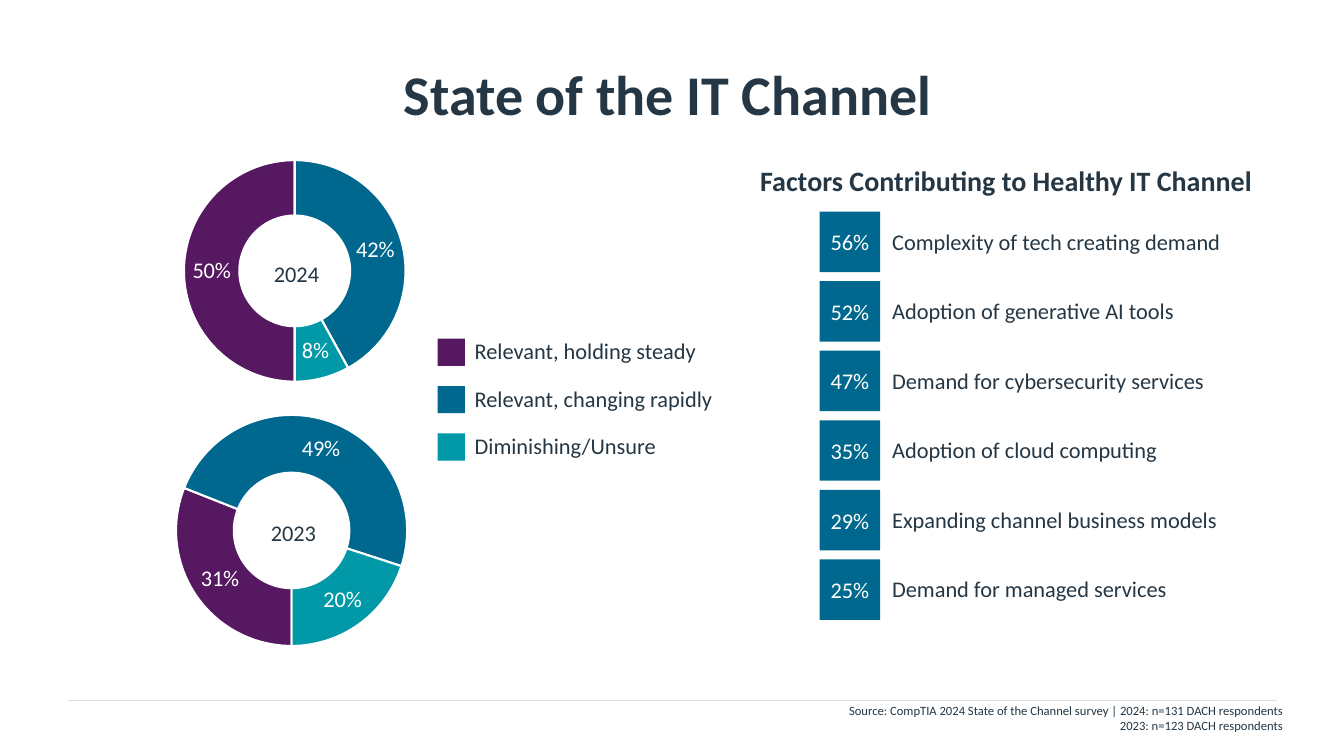
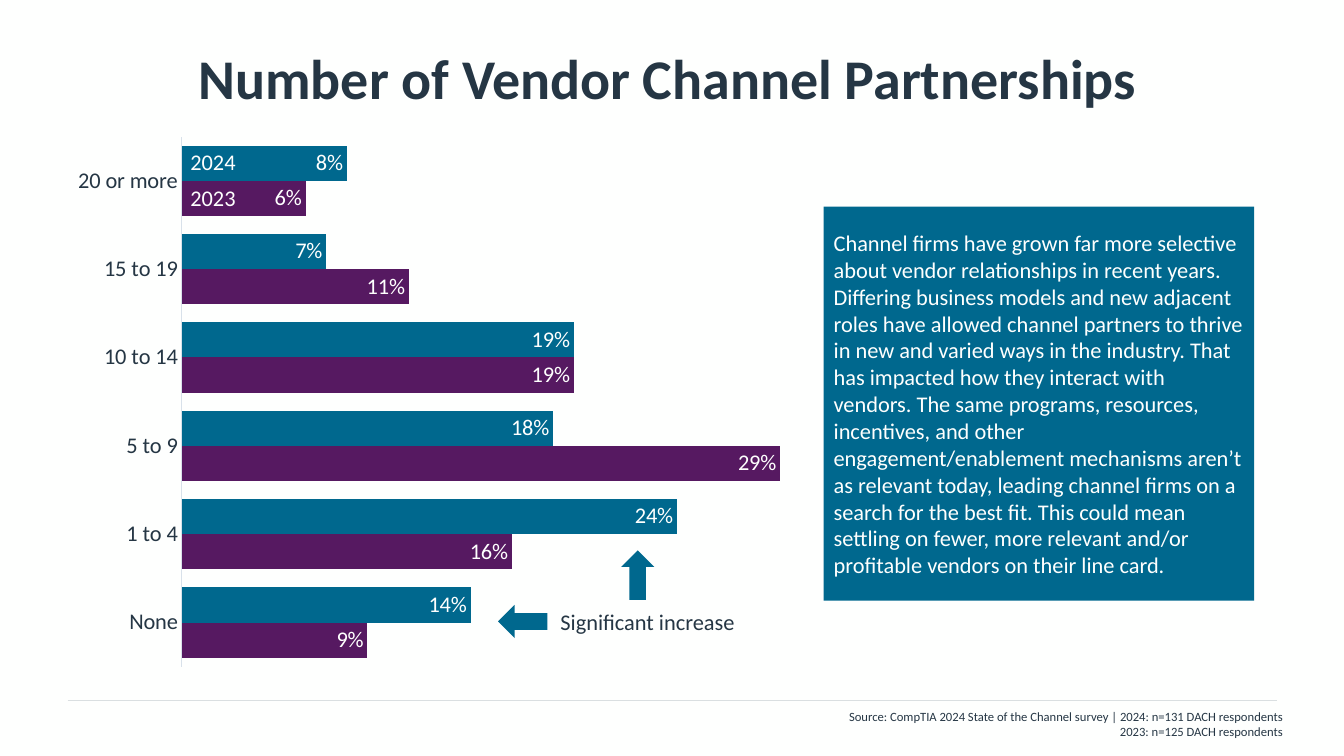
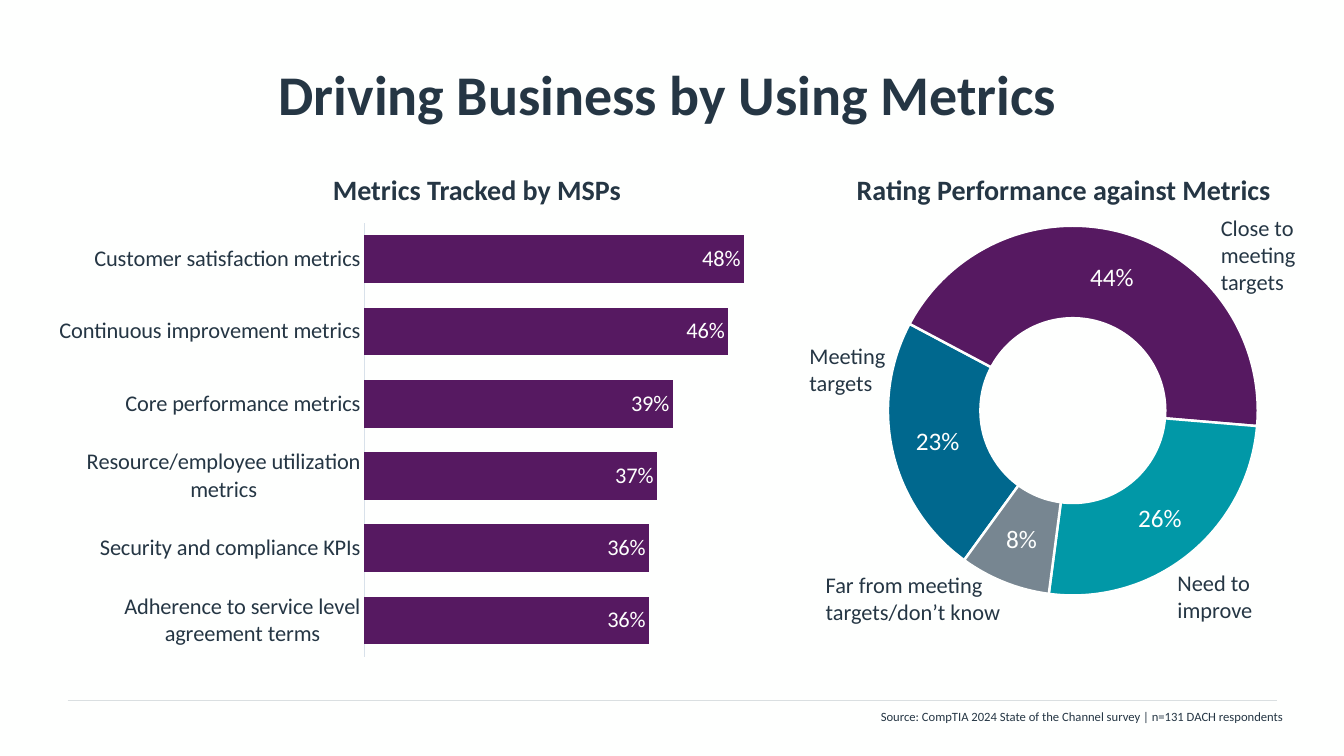
from pptx import Presentation
from pptx import util as u
from pptx.chart.data import CategoryChartData
from pptx.dml.color import RGBColor
from pptx.enum import chart as charts, shapes, text
from pptx.oxml import parse_xml
from pptx.oxml.ns import nsdecls, qn

COLORS = {
    "paper": "FEFFFE",
    "ink": "253644",
    "rule": "DADFE1",
    "axis": "D8E1EA",
    "purple": "561961",
    "blue": "00688E",
    "teal": "0198A7",
    "gray": "778691",
}
FONT = "Calibri"
LEFT, CENTER, RIGHT = text.PP_ALIGN.LEFT, text.PP_ALIGN.CENTER, text.PP_ALIGN.RIGHT
TOP, MIDDLE = text.MSO_ANCHOR.TOP, text.MSO_ANCHOR.MIDDLE
SURVEY = "Source: CompTIA 2024 State of the Channel survey | "


def color(name):
    return RGBColor.from_string(COLORS[name])


def inches(*lengths):
    return [u.Inches(length) for length in lengths]


def style(font, size, name="ink", bold=False):
    font.name = FONT
    font.size = u.Pt(size)
    font.bold = bold
    font.color.rgb = color(name)


def write(frame, words, size=16, ink="ink", bold=False, align=LEFT,
          anchor=TOP, inset=0.1, after=0, wrap=True):
    frame.text = words
    frame.word_wrap = wrap
    frame.vertical_anchor = anchor
    frame.margin_left, frame.margin_right = inches(inset, 0.1)
    frame.margin_top = frame.margin_bottom = u.Inches(0.05)
    for para in frame.paragraphs:
        para.alignment = align
        para.space_after = u.Pt(after)
        for span in para.runs:
            style(span.font, size, ink, bold)


class Deck:
    def __init__(self):
        self.file = Presentation()
        self.file.slide_width, self.file.slide_height = inches(13.33, 7.5)
        self.page = None

    def new_page(self, title, source, title_top=0.3, source_top=6.98):
        self.page = self.file.slides.add_slide(self.file.slide_layouts[5])
        fill = self.page.background.fill
        fill.solid()
        fill.fore_color.rgb = color("paper")
        self.rule()
        box = self.page.shapes.title
        box.left, box.top, box.width, box.height = inches(0.67, title_top, 12, 1.25)
        write(box.text_frame, title, size=40, bold=True, align=CENTER,
              anchor=MIDDLE, inset=0)
        self.label(SURVEY + source, 6.33, source_top, 6.49, 0.4, size=9, align=RIGHT)

    def rule(self):
        line = self.page.shapes.add_connector(
            shapes.MSO_CONNECTOR.STRAIGHT, *inches(0.67, 6.95, 12.67, 6.95))
        line.line.color.rgb = color("rule")
        line.line.width = u.Pt(0.5)
        line.element.spPr.append(parse_xml(f"<a:effectLst {nsdecls('a')}/>"))

    def label(self, words, left, top, width, height=0.37, **form):
        box = self.page.shapes.add_textbox(*inches(left, top, width, height))
        write(box.text_frame, words, **form)

    def heading(self, words, left, top, width, align=CENTER):
        self.label(words, left, top, width, 0.44, size=20, bold=True, align=align)

    def shape(self, left, top, width, height, fill="blue", words="",
              kind=shapes.MSO_SHAPE.RECTANGLE, turn=0, **form):
        box = self.page.shapes.add_shape(kind, *inches(left, top, width, height))
        box.shadow.inherit = False
        box.fill.solid()
        box.fill.fore_color.rgb = color(fill)
        box.line.fill.background()
        box.rotation = turn
        if words:
            write(box.text_frame, words, ink="paper", anchor=MIDDLE, **form)

    def arrow(self, left, top, turn):
        self.shape(left, top, 0.49, 0.33, kind=shapes.MSO_SHAPE.RIGHT_ARROW, turn=turn)

    def chart(self, kind, place, area, categories, rows, label_size=16):
        data = CategoryChartData(number_format="0%")
        data.categories = categories
        for number, row in enumerate(rows, 1):
            data.add_series(f"Series {number}", row)
        chart = self.page.shapes.add_chart(kind, *inches(*place), data).chart
        chart.has_legend = False
        chart.has_title = False
        style(chart.font, 11)
        self.place_plot(chart, area)
        plot = chart.plots[0]
        plot.has_data_labels = True
        labels = plot.data_labels
        labels.show_value = True
        labels.show_percentage = False
        labels.number_format = "0%"
        labels.number_format_is_linked = False
        style(labels.font, label_size, "paper")
        return chart

    def place_plot(self, chart, area):
        holder = chart.element.xpath(".//c:plotArea")[0]
        for old in holder.findall(qn("c:layout")):
            holder.remove(old)
        sizes = "".join(f'<c:{key} val="{value}"/>' for key, value in zip("xywh", area))
        holder.insert(0, parse_xml(
            f'<c:layout {nsdecls("c")}><c:manualLayout><c:layoutTarget val="inner"/>'
            f'<c:xMode val="edge"/><c:yMode val="edge"/>{sizes}'
            "</c:manualLayout></c:layout>"))

    def doughnut(self, place, area, values, fills, start=180, edge=1.5, label_size=16):
        categories = [str(number) for number in range(1, len(values) + 1)]
        chart = self.chart(charts.XL_CHART_TYPE.DOUGHNUT, place, area,
                           categories, [values], label_size)
        chart.element.xpath(".//c:firstSliceAng")[0].set("val", str(start))
        chart.element.xpath(".//c:holeSize")[0].set("val", "50")
        series = chart.plots[0].series[0]
        for number, name in enumerate(fills):
            form = series.points[number].format
            form.fill.solid()
            form.fill.fore_color.rgb = color(name)
            form.line.color.rgb = color("paper")
            form.line.width = u.Pt(edge)

    def bars(self, place, area, categories, rows, fills, limit):
        chart = self.chart(charts.XL_CHART_TYPE.BAR_CLUSTERED, place, area,
                           categories, rows)
        plot = chart.plots[0]
        plot.gap_width = 51
        plot.vary_by_categories = False
        plot.data_labels.position = charts.XL_LABEL_POSITION.INSIDE_END
        for series, name in zip(plot.series, fills):
            series.invert_if_negative = False
            series.format.fill.solid()
            series.format.fill.fore_color.rgb = color(name)
        scale = chart.value_axis
        scale.minimum_scale, scale.maximum_scale = 0, limit
        scale.has_major_gridlines = False
        scale.visible = False
        axis = chart.category_axis
        axis.major_tick_mark = axis.minor_tick_mark = charts.XL_TICK_MARK.NONE
        axis.format.line.color.rgb = color("axis")
        axis.format.line.width = u.Pt(0.75)
        style(axis.tick_labels.font, 16)


def channel_state(deck):
    deck.new_page("State of the IT Channel",
                  "2024: n=131 DACH respondents\n2023: n=123 DACH respondents",
                  source_top=6.92)
    fills = ["purple", "blue", "teal"]
    deck.doughnut((1.54, 4.03, 2.68, 2.5), (0.053, 0.035, 0.903, 0.917),
                  [0.31, 0.49, 0.2], fills)
    deck.doughnut((1.69, 1.5, 2.53, 2.5), (0.053, 0.035, 0.869, 0.881),
                  [0.5, 0.42, 0.08], fills)
    for year, left, top in [("2023", 2.28, 5.08), ("2024", 2.31, 2.51)]:
        deck.label(year, left, top, 1.36, 0.4, align=CENTER, anchor=MIDDLE, inset=0)

    views = ["Relevant, holding steady", "Relevant, changing rapidly", "Diminishing/Unsure"]
    for row, (view, fill) in enumerate(zip(views, fills)):
        top = 3.36 + 0.47 * row
        deck.shape(4.34, top, 0.27, 0.27, fill)
        deck.label(view, 4.61, top - 0.06, 2.57)

    deck.heading("Factors Contributing to Healthy IT Channel", 7.44, 1.57, 5.15, LEFT)
    factors = [
        ("56%", "Complexity of tech creating demand"),
        ("52%", "Adoption of generative AI tools"),
        ("47%", "Demand for cybersecurity services"),
        ("35%", "Adoption of cloud computing"),
        ("29%", "Expanding channel business models"),
        ("25%", "Demand for managed services"),
    ]
    for row, (share, factor) in enumerate(factors):
        top = 2.1 + 0.69 * row
        deck.shape(8.13, top, 0.6, 0.6, words=share, align=CENTER)
        deck.label(factor, 8.75, top + 0.11, 3.62)


def partnerships(deck):
    deck.new_page("Number of Vendor Channel Partnerships",
                  "2024: n=131 DACH respondents\n2023: n=125 DACH respondents",
                  title_top=0.14)
    deck.bars((0.6, 1.35, 7.71, 5.27), (0.156, 0, 0.823, 1),
              ["None", "1 to 4", "5 to 9", "10 to 14", "15 to 19", "20 or more"],
              [[0.09, 0.16, 0.29, 0.19, 0.11, 0.06],
               [0.14, 0.24, 0.18, 0.19, 0.07, 0.08]],
              ["purple", "blue"], 0.31)
    for year, top in [("2024", 1.42), ("2023", 1.78)]:
        deck.label(year, 1.79, top, 0.66, ink="paper", wrap=False)
    deck.shape(8.17, 2.05, 4.27, 3.91, after=10, words=(
        "Channel firms have grown far more selective about vendor relationships in "
        "recent years. Differing business models and new adjacent roles have allowed "
        "channel partners to thrive in new and varied ways in the industry. That has "
        "impacted how they interact with vendors. The same programs, resources, "
        "incentives, and other engagement/enablement mechanisms aren’t as relevant "
        "today, leading channel firms on a search for the best fit. This could mean "
        "settling on fewer, more relevant and/or profitable vendors on their line card."))
    deck.label("Significant increase", 5.46, 5.98, 2.42)
    deck.arrow(6.08, 5.54, 270)
    deck.arrow(4.94, 6, 180)


def metrics(deck):
    deck.new_page("Driving Business by Using Metrics", "n=131 DACH respondents")
    deck.bars((0.48, 2.21, 7.61, 4.31), (0.412, 0, 0.588, 1),
              ["Adherence to service level agreement terms",
               "Security and compliance KPIs",
               "Resource/employee utilization metrics",
               "Core performance metrics",
               "Continuous improvement metrics",
               "Customer satisfaction metrics"],
              [[0.36, 0.36, 0.37, 0.39, 0.46, 0.48]], ["purple"], 0.57)
    deck.doughnut((8.35, 2.14, 4.41, 4), (0.068, 0.025, 0.903, 0.917),
                  [0.23, 0.44, 0.26, 0.08], ["blue", "purple", "teal", "gray"],
                  start=216, edge=1.75, label_size=18)
    ratings = [
        ("Close to meeting targets", 12.01, 2.08, 1.08, 0.91),
        ("Meeting targets", 7.93, 3.35, 1.09, 0.64),
        ("Need to improve", 11.58, 5.6, 1.09, 0.64),
        ("Far from meeting targets/don’t know", 8.09, 5.62, 2.08, 0.64),
    ]
    for rating in ratings:
        deck.label(*rating)
    deck.heading("Rating Performance against Metrics", 7.93, 1.66, 5.24)
    deck.heading("Metrics Tracked by MSPs", 2.11, 1.66, 5.24)


def main():
    deck = Deck()
    channel_state(deck)
    partnerships(deck)
    metrics(deck)
    deck.file.save("out.pptx")


if __name__ == "__main__":
    main()
